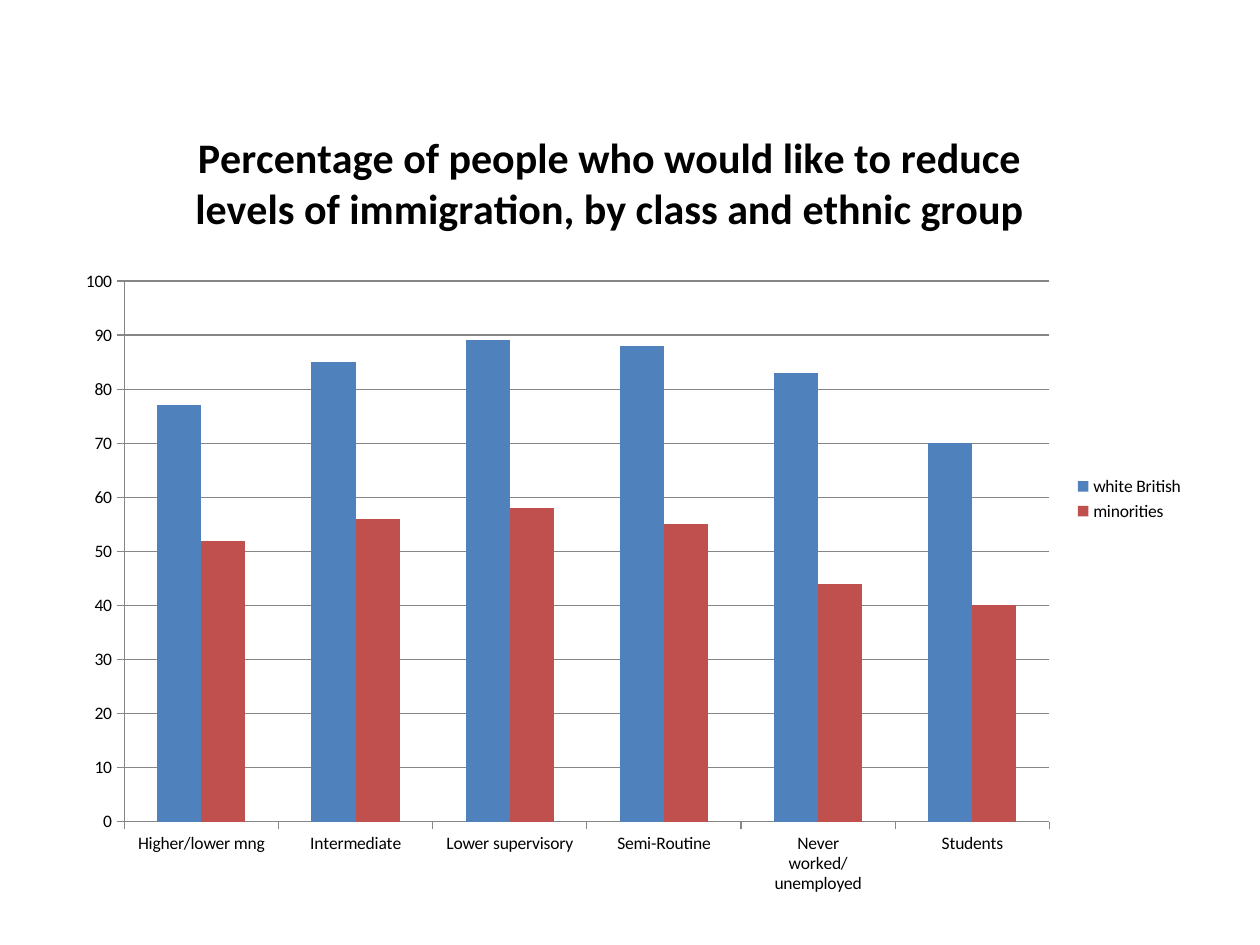
from lxml import etree
from pptx import Presentation
from pptx import util as u
from pptx.chart.data import CategoryChartData
from pptx.dml.color import RGBColor
from pptx.enum import chart as ch
from pptx.oxml.ns import qn

CLASSES = ["Higher/lower mng", "Intermediate", "Lower supervisory",
           "Semi-Routine", "Never worked/unemployed", "Students"]
GROUPS = [("white British", [77, 85, 89, 88, 83, 70], "4F81BD"),
          ("minorities", [52, 56, 58, 55, 44, 40], "C0504D")]
TITLE = ("Percentage of people who would like to reduce levels of "
         "immigration, by class and ethnic group")


def color(value):
    return RGBColor.from_string(value)


def write(tf, text, size=10, bold=False, fill="000000", font="Calibri"):
    r = tf.paragraphs[0].add_run()
    r.text = text
    r.font.size = u.Pt(size)
    r.font.bold = bold
    r.font.name = font
    r.font.color.rgb = color(fill)


def place(element, index, **fractions):
    for old in element.findall(qn("c:layout")):
        element.remove(old)
    layout = etree.Element(qn("c:layout"))
    manual = etree.SubElement(layout, qn("c:manualLayout"))
    for tag, value in fractions.items():
        etree.SubElement(manual, qn(f"c:{tag}")).set("val", str(value))
    element.insert(index, layout)


def style_axis(axis):
    axis.major_tick_mark = ch.XL_TICK_MARK.OUTSIDE
    axis.minor_tick_mark = ch.XL_TICK_MARK.NONE
    axis.format.line.color.rgb = color("868686")
    axis.format.line.width = u.Pt(0.75)


def add_columns(s, left, top, width, height):
    data = CategoryChartData()
    data.categories = CLASSES
    for name, values, _ in GROUPS:
        data.add_series(name, values)
    chart = s.shapes.add_chart(ch.XL_CHART_TYPE.COLUMN_CLUSTERED,
                               u.Inches(left), u.Inches(top),
                               u.Inches(width), u.Inches(height), data).chart
    chart.font.size = u.Pt(10)
    chart.font.name = "Calibri"
    chart.font.color.rgb = color("000000")

    plot = chart.plots[0]
    plot.vary_by_categories = False
    plot.gap_width = 150
    plot.overlap = 0
    for series, (_, _, fill) in zip(plot.series, GROUPS):
        series.format.fill.solid()
        series.format.fill.fore_color.rgb = color(fill)

    style_axis(chart.category_axis)
    style_axis(chart.value_axis)
    chart.value_axis.minimum_scale = 0
    chart.value_axis.maximum_scale = 100
    chart.value_axis.major_unit = 10
    grid = chart.value_axis.major_gridlines.format.line
    grid.color.rgb = color("868686")
    grid.width = u.Pt(0.75)

    chart.has_legend = True
    chart.legend.position = ch.XL_LEGEND_POSITION.RIGHT
    chart.legend.include_in_layout = False
    return chart


def add_title(chart, text):
    chart.has_title = True
    write(chart.chart_title.text_frame, text, size=24, bold=True)
    chart.chart_title.include_in_layout = False


def main():
    prs = Presentation()
    prs.slide_width, prs.slide_height = u.Inches(10), u.Inches(7.5)
    s = prs.slides.add_slide(prs.slide_layouts[6])
    chart = add_columns(s, 0.5, 0.84, 9, 6.24)
    add_title(chart, TITLE)
    space = chart.element.find(qn("c:chart"))
    place(space.find(qn("c:title")), 1, xMode="edge", yMode="edge", x=0.11, y=0.02)
    place(space.find(qn("c:plotArea")), 0, layoutTarget="inner", xMode="edge",
          yMode="edge", x=0.054, y=0.223, w=0.816, h=0.688)
    prs.save("out.pptx")


if __name__ == "__main__":
    main()
